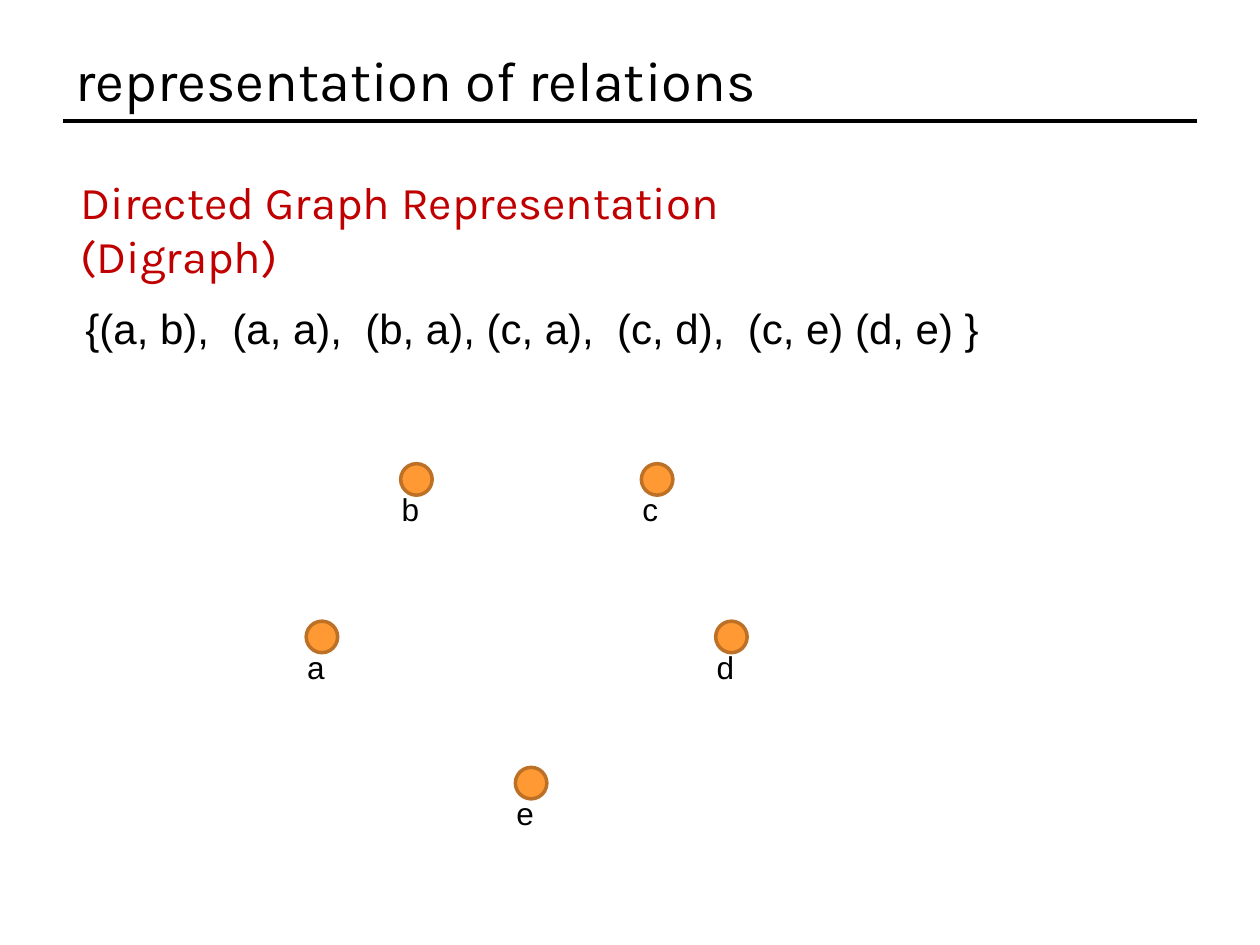
"""Build a slide that shows the nodes of a directed graph for a relation."""
from lxml import etree
from pptx import Presentation
from pptx.dml.color import RGBColor
from pptx.enum.shapes import MSO_CONNECTOR, MSO_SHAPE
from pptx.enum.text import MSO_ANCHOR, PP_ALIGN
from pptx.oxml.ns import qn
from pptx.util import Inches, Pt

LINE, OVAL = MSO_CONNECTOR.STRAIGHT, MSO_SHAPE.OVAL
LEFT, MIDDLE, TOP = PP_ALIGN.LEFT, MSO_ANCHOR.MIDDLE, MSO_ANCHOR.TOP

BLACK = RGBColor(0x00, 0x00, 0x00)
RED = RGBColor(0xC0, 0x00, 0x00)
ORANGE = RGBColor(0xFF, 0x99, 0x33)
BROWN = RGBColor(0xBD, 0x71, 0x26)

TITLE = "representation of relations"
TEXTS = [
    ("Directed Graph Representation (Digraph)", (0.54, 1.33, 6.75, 0.54), 26, "Karla", RED),
    ("{(a, b),  (a, a),  (b, a), (c, a),  (c, d),  (c, e) (d, e) }",
     (0.58, 2.35, 7.35, 0.51), 24, "Arial", BLACK),
]
NODES = [("a", 2.43, 4.93), ("d", 5.68, 4.93), ("e", 4.09, 6.09),
         ("b", 3.18, 3.68), ("c", 5.09, 3.68)]
DOT = 0.25


def write(shape, text, size, font, color, anchor=TOP):
    frame = shape.text_frame
    frame.word_wrap = True
    frame.vertical_anchor = anchor
    para = frame.paragraphs[0]
    para.alignment = LEFT
    run = para.add_run()
    run.text = text
    run.font.size = Pt(size)
    run.font.name = font
    run.font.color.rgb = color


def add_text(slide, text, box, size, font, color):
    shape = slide.shapes.add_textbox(*map(Inches, box))
    write(shape, text, size, font, color)


def add_title(slide):
    title = slide.shapes.title
    title.left, title.top, title.width, title.height = map(Inches, (0.5, 0.3, 9, 0.66))
    write(title, TITLE, 32, "Karla", BLACK, MIDDLE)
    rule = slide.shapes.add_connector(LINE, *map(Inches, (0.5, 0.96, 9.5, 0.96)))
    rule.line.color.rgb = BLACK
    rule.line.width = Pt(2)
    etree.SubElement(rule._element.spPr, qn("a:effectLst"))


def add_node(slide, name, left, top):
    dot = slide.shapes.add_shape(OVAL, *map(Inches, (left, top, DOT, DOT)))
    dot.shadow.inherit = False
    dot.fill.solid()
    dot.fill.fore_color.rgb = ORANGE
    dot.line.color.rgb = BROWN
    dot.line.width = Pt(2)
    add_text(slide, name, (left - 0.09, top + 0.16, 0.34, 0.4), 18, "Arial", BLACK)


def main():
    deck = Presentation()
    deck.slide_width, deck.slide_height = Inches(10), Inches(7.5)
    slide = deck.slides.add_slide(deck.slide_layouts[5])
    add_title(slide)
    for item in TEXTS:
        add_text(slide, *item)
    for node in NODES:
        add_node(slide, *node)
    deck.save("out.pptx")


if __name__ == "__main__":
    main()
